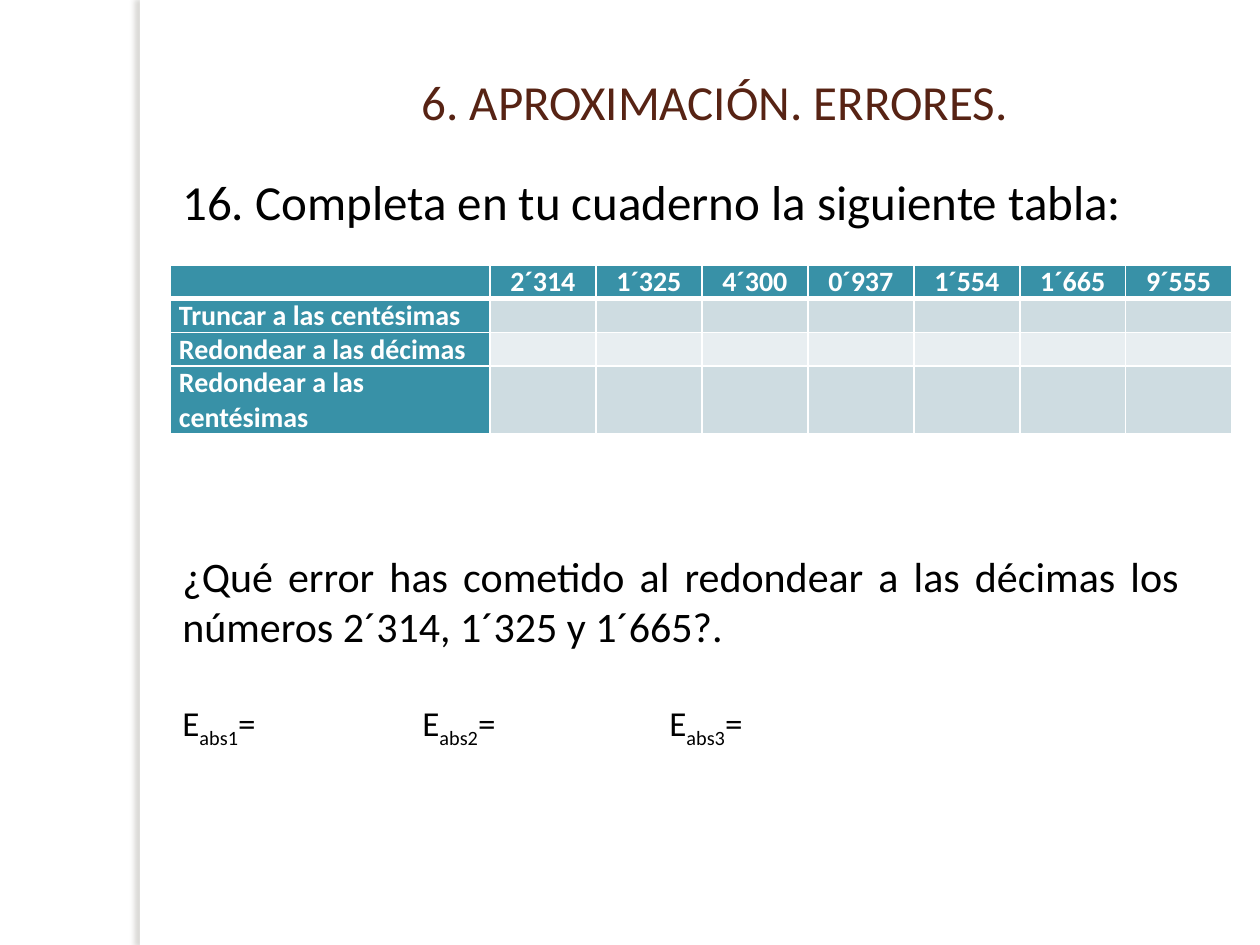
"""Build the exercise slide on rounding and errors."""
from dataclasses import dataclass

from lxml.etree import SubElement
from pptx import Presentation
from pptx.dml.color import RGBColor
from pptx.enum.shapes import MSO_SHAPE
from pptx.enum.text import MSO_ANCHOR, PP_ALIGN as Align
from pptx.oxml import parse_xml
from pptx.oxml.ns import nsdecls, qn
from pptx.util import Emu, Pt

SCALE = 914400 / 126
WHITE, BLACK, BROWN = "FFFFFF", "000000", "572314"
TEAL, DARK, PALE = "3891A7", "CEDCE1", "E8EEF1"
HEADS = ["2´314", "1´325", "4´300", "0´937", "1´554", "1´665", "9´555"]
SIDES = ["Truncar a las centésimas", "Redondear a las décimas",
         "Redondear a las centésimas"]
HEIGHTS = [33, 34, 33, 68]
TABS = [240, 487]


@dataclass
class Box:
    """Hold a place in px."""
    left: int
    top: int
    width: int
    height: int

    def emu(self) -> list[Emu]:
        """Return the four lengths in EMU."""
        return [px(n) for n in (self.left, self.top, self.width, self.height)]


@dataclass
class Style:
    """Hold the look of a run."""
    size: int
    color: str = BLACK
    bold: bool = False


def px(n: int) -> Emu:
    """Turn px into EMU."""
    return Emu(round(n * SCALE))


def paint(fill, color: str) -> None:
    """Give a fill one solid colour."""
    fill.solid()
    fill.fore_color.rgb = RGBColor.from_string(color)


def write(para, text: str, style: Style, base: int = 0) -> None:
    """Add a run, lowered when base is negative."""
    run = para.add_run()
    run.text = text
    look = {"name": "Calibri", "size": Pt(style.size), "bold": style.bold}
    for key, value in look.items():
        setattr(run.font, key, value)
    run.font.color.rgb = RGBColor.from_string(style.color)
    if base:
        run._r.get_or_add_rPr().set("baseline", str(base * 1000))


def add_box(slide, box: Box):
    """Add a wrapped text box and return its frame."""
    frame = slide.shapes.add_textbox(*box.emu()).text_frame
    frame.word_wrap = True
    return frame


def add_band(slide, box: Box) -> None:
    """Add the white strip with its shadow to the left."""
    band = slide.shapes.add_shape(MSO_SHAPE.RECTANGLE, *box.emu())
    paint(band.fill, WHITE)
    band.line.fill.background()
    band._element.spPr.append(parse_xml(
        f'<a:effectLst {nsdecls("a")}><a:outerShdw blurRad="38100" dist="38100" '
        'dir="10800000" algn="tl" rotWithShape="0"><a:srgbClr val="736F63">'
        '<a:alpha val="25000"/></a:srgbClr></a:outerShdw></a:effectLst>'))


def add_title(slide, box: Box, text: str) -> None:
    """Place and fill the title."""
    title = slide.shapes.title
    for key, value in zip(("left", "top", "width", "height"), box.emu()):
        setattr(title, key, value)
    title.text_frame.vertical_anchor = MSO_ANCHOR.MIDDLE
    para = title.text_frame.paragraphs[0]
    para.alignment = Align.CENTER
    write(para, text, Style(28, BROWN))


def edge(cell, heavy: bool) -> None:
    """Draw white cell borders, with a heavy lower one if asked."""
    props = cell._tc.get_or_add_tcPr()
    for spot, side in enumerate("LRTB"):
        width = Pt(3 if heavy and side == "B" else 1)
        props.insert(spot, parse_xml(
            f'<a:ln{side} {nsdecls("a")} w="{width}"><a:solidFill>'
            f'<a:srgbClr val="{WHITE}"/></a:solidFill></a:ln{side}>'))


def fill_cell(cell, text: str, row: int, col: int) -> None:
    """Write and format one table cell."""
    look = {"margin_left": px(9), "margin_right": px(9),
            "margin_top": 0, "margin_bottom": 0}
    for key, value in look.items():
        setattr(cell, key, value)
    para = cell.text_frame.paragraphs[0]
    if text:
        para.alignment = Align.LEFT if row else Align.CENTER
        write(para, text, Style(16, WHITE, True))
    else:
        SubElement(para._p, qn("a:endParaRPr"), sz="1600")
    head = row == 0 or col == 0
    paint(cell.fill, TEAL if head else DARK if row % 2 else PALE)
    edge(cell, row == 0)


def add_grid(slide, box: Box) -> None:
    """Add the table to be completed."""
    rows = [["", *HEADS]] + [[side] + [""] * len(HEADS) for side in SIDES]
    table = slide.shapes.add_table(len(rows), len(rows[0]), *box.emu()).table
    for col, width in zip(table.columns, [320] + [106] * len(HEADS)):
        col.width = px(width)
    for r, (texts, height) in enumerate(zip(rows, HEIGHTS)):
        table.rows[r].height = px(height)
        for c, text in enumerate(texts):
            fill_cell(table.cell(r, c), text, r, c)


def add_task(slide, box: Box) -> None:
    """Add the question and the line of errors."""
    frame = add_box(slide, box)
    ask = frame.paragraphs[0]
    ask.alignment = Align.JUSTIFY
    ask.space_after = Pt(29)
    write(ask, "¿Qué error has cometido al redondear a las décimas los "
               "números 2´314, 1´325 y 1´665?.", Style(24))
    line = frame.add_paragraph()
    line.alignment = Align.LEFT
    stops = SubElement(line._p.get_or_add_pPr(), qn("a:tabLst"))
    for stop in TABS:
        SubElement(stops, qn("a:tab"), pos=str(px(stop)), algn="l")
    style = Style(20)
    for n in range(1, 4):
        write(line, "E" if n == 1 else "\tE", style)
        write(line, f"abs{n}", style, -25)
        write(line, "=", style)


def main() -> None:
    """Build and save the slide."""
    deck = Presentation()
    deck.slide_width, deck.slide_height = px(1260), px(945)
    slide = deck.slides.add_slide(deck.slide_layouts[5])
    paint(slide.background.fill, WHITE)
    add_band(slide, Box(140, 0, 10, 945))
    add_title(slide, Box(198, 57, 1033, 88), "6. APROXIMACIÓN. ERRORES.")
    para = add_box(slide, Box(170, 165, 1022, 72)).paragraphs[0]
    para.space_after = Pt(6)
    write(para, "16. Completa en tu cuaderno la siguiente tabla:", Style(28))
    add_grid(slide, Box(170, 265, 1062, sum(HEIGHTS)))
    add_task(slide, Box(170, 544, 1022, 208))
    deck.save("out.pptx")


if __name__ == "__main__":
    main()
